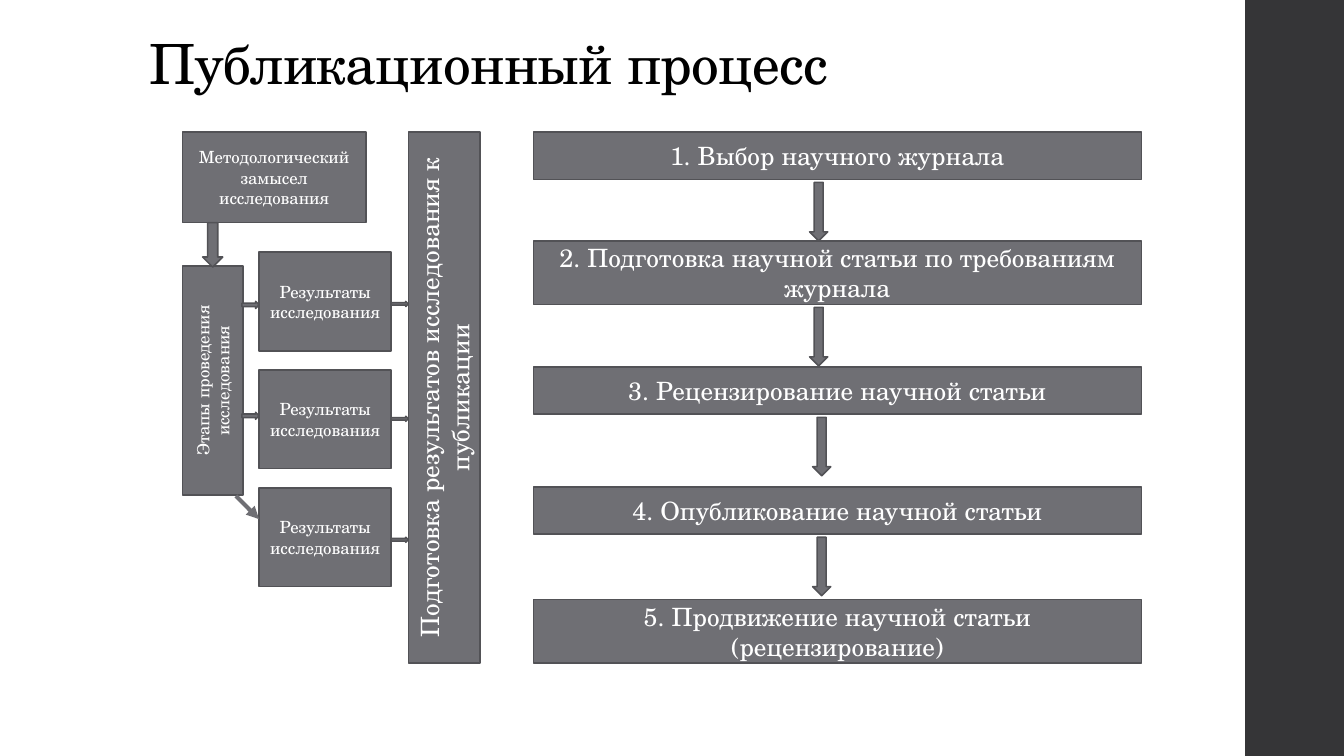
from dataclasses import dataclass

from lxml import etree
from pptx import Presentation
from pptx import util as u
from pptx.dml import color
from pptx.enum import shapes, text
from pptx.oxml import ns


@dataclass(frozen=True)
class Theme:
    font: str = "TeX Gyre Schola"
    ink: str = "000000"
    paper: str = "FFFFFF"
    fill: str = "6F6F74"
    edge: str = "525256"
    band: str = "353537"
    title: float = 39.6
    large: float = 18
    small: float = 12
    edge_width: float = 1.1
    link_width: float = 3
    title_tracking: int = -50


WIDTH, HEIGHT = u.Inches(13.33), u.Inches(7.5)
COLUMNS, ROWS = 133.3, 75
RECT = shapes.MSO_SHAPE.RECTANGLE
DOWN = shapes.MSO_SHAPE.DOWN_ARROW
RIGHT = shapes.MSO_SHAPE.RIGHT_ARROW


def rgb(value):
    return color.RGBColor.from_string(value)


class Board:
    def __init__(self, page, theme):
        self.page = page
        self.theme = theme

    def place(self, column, row):
        return round(column * WIDTH / COLUMNS), round(row * HEIGHT / ROWS)

    def label(self, shape, words, size, ink, align, anchor):
        frame = shape.text_frame
        frame.word_wrap = True
        frame.vertical_anchor = anchor
        para = frame.paragraphs[0]
        para.alignment = align
        span = para.add_run()
        span.text = words
        span.font.name = self.theme.font
        span.font.size = u.Pt(size)
        span.font.color.rgb = rgb(ink)
        return para, span

    def title(self, words, column, row, columns, rows):
        box = self.page.shapes.add_textbox(
            *self.place(column, row), *self.place(columns, rows))
        para, span = self.label(box, words, self.theme.title, self.theme.ink,
                                text.PP_ALIGN.LEFT, text.MSO_ANCHOR.BOTTOM)
        para.line_spacing = 0.9
        span.font._element.set("spc", str(self.theme.title_tracking))

    def shape(self, kind, column, row, columns, rows):
        shape = self.page.shapes.add_shape(
            kind, *self.place(column, row), *self.place(columns, rows))
        shape.shadow.inherit = False
        shape.fill.solid()
        shape.fill.fore_color.rgb = rgb(self.theme.fill)
        shape.line.color.rgb = rgb(self.theme.edge)
        shape.line.width = u.Pt(self.theme.edge_width)
        return shape

    def band(self, column, columns):
        band = self.shape(RECT, column, 0, columns, ROWS)
        band.fill.fore_color.rgb = rgb(self.theme.band)
        band.line.fill.background()

    def box(self, words, size, column, row, columns, rows, upright=False):
        box = self.shape(RECT, column, row, columns, rows)
        self.label(box, words, size, self.theme.paper,
                   text.PP_ALIGN.CENTER, text.MSO_ANCHOR.MIDDLE)
        if upright:
            box.text_frame._txBody.bodyPr.set("vert", "vert270")

    def link(self, start, end):
        link = self.page.shapes.add_connector(
            shapes.MSO_CONNECTOR.STRAIGHT, *self.place(*start), *self.place(*end))
        link.line.color.rgb = rgb(self.theme.fill)
        link.line.width = u.Pt(self.theme.link_width)
        props = link._element.spPr
        line = props.find(ns.qn("a:ln"))
        etree.SubElement(line, ns.qn("a:tailEnd"), type="triangle")
        etree.SubElement(props, ns.qn("a:effectLst"))


def draw_research(board):
    theme = board.theme
    left, top = 18.1, 13.1
    board.box("Методологический замысел исследования", theme.small,
              left, top, 18.2, 9)
    board.box("Этапы проведения исследования", theme.small,
              left, 26.4, 6, 22.7, upright=True)
    board.box("Подготовка результатов исследования к публикации", theme.large,
              40.5, top, 7.1, 52.7, upright=True)
    for index in range(3):
        board.box("Результаты исследования", theme.small,
                  25.7, 25 + 11.7 * index, 13.1, 9.8)
    board.shape(DOWN, 20.1, 22.1, 2, 4.4)
    for row in (29.9, 40.9):
        board.shape(RIGHT, 24, row, 1.7, 0.7)
    board.link((23.4, 49.2), (25.7, 51.5))
    for row in (29.9, 41.3, 53.3):
        board.shape(RIGHT, 38.8, row, 1.7, 0.5)


def draw_publication(board):
    one_line, two_lines = 4.7, 6.3
    steps = [
        ("1. Выбор научного журнала", 13.1, one_line, 80.3),
        ("2. Подготовка научной статьи по требованиям журнала", 23.9, two_lines, 80.3),
        ("3. Рецензирование научной статьи", 36.4, one_line, 80.6),
        ("4. Опубликование научной статьи", 48.3, one_line, 80.6),
        ("5. Продвижение научной статьи (рецензирование)", 59.5, two_lines, None),
    ]
    for words, row, rows, arrow_column in steps:
        board.box(words, board.theme.large, 52.9, row, 60.3, rows)
        if arrow_column:
            board.shape(DOWN, arrow_column, row + rows + 0.3, 1.8, 5.8)


def main():
    deck = Presentation()
    deck.slide_width, deck.slide_height = WIDTH, HEIGHT
    page = deck.slides.add_slide(deck.slide_layouts[6])
    board = Board(page, Theme())
    board.band(123.5, 9.8)
    board.title("Публикационный процесс", 13.8, 4, 106, 6.1)
    draw_research(board)
    draw_publication(board)
    deck.save("out.pptx")


if __name__ == "__main__":
    main()
